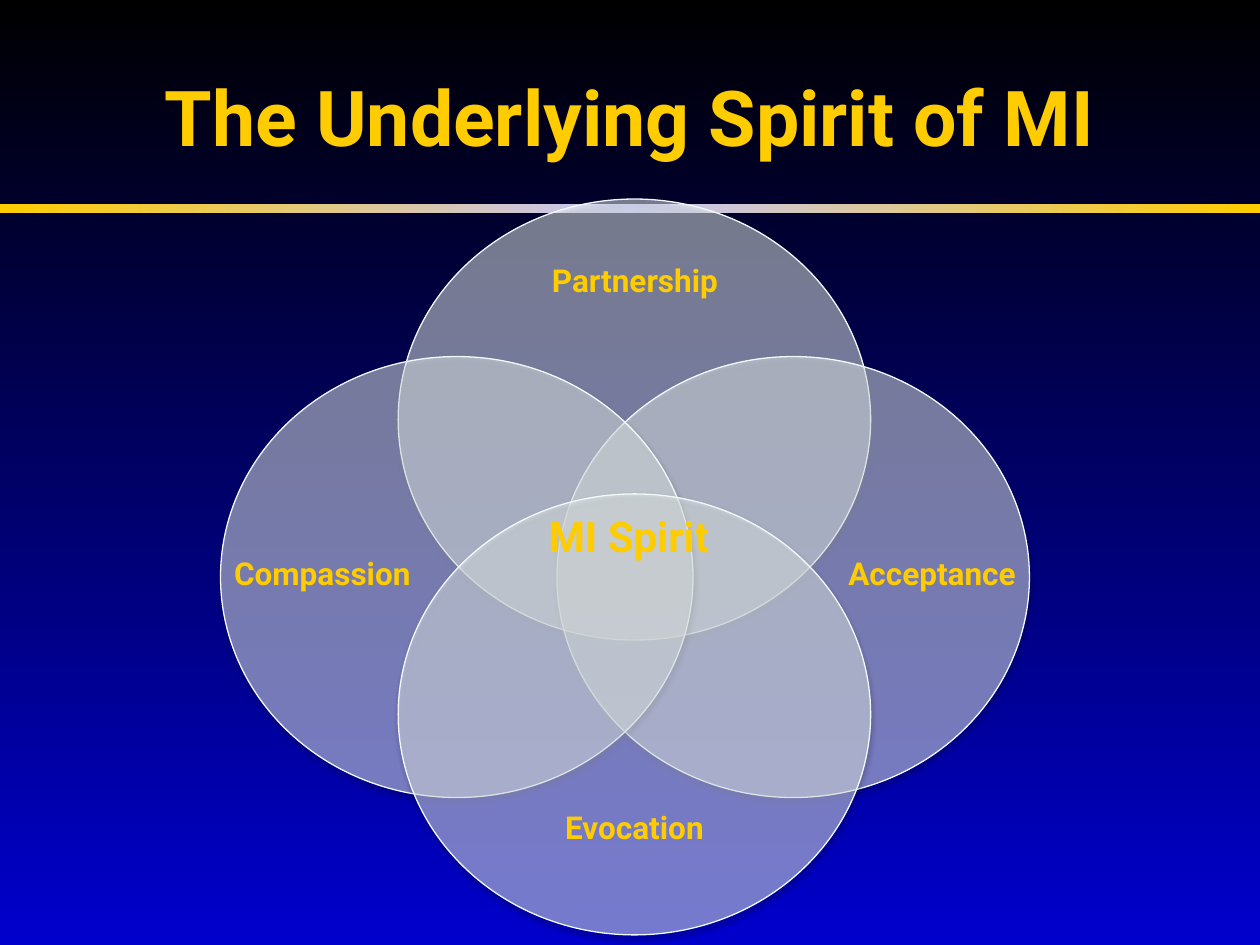
from copy import deepcopy

from lxml.etree import SubElement
from pptx import Presentation
from pptx.dml.color import RGBColor
from pptx.enum.shapes import MSO_SHAPE as Shape
from pptx.enum.text import MSO_ANCHOR as Anchor, MSO_AUTO_SIZE as AutoSize, PP_ALIGN as Align
from pptx.oxml.ns import qn
from pptx.util import Inches, Pt

COLORS = {
    "night": "000000",
    "blue": "0000CC",
    "gold": "FFCC00",
    "lilac": "C5C5FF",
    "mist": "F1F9F9",
    "shadow": "000000",
}
FONT = "Roboto"
CIRCLE_WIDTH, CIRCLE_HEIGHT = 3.75, 3.5
LABEL_HEIGHT = 0.34

CIRCLES = [
    ("Partnership", (3.16, 1.58), (3.79, 2.08, 2.5), Align.CENTER),
    ("Acceptance", (4.42, 2.83), (6.12, 4.41, 2.04), Align.RIGHT),
    ("Compassion", (1.75, 2.83), (1.76, 4.41, 2.16), Align.LEFT),
    ("Evocation", (3.16, 3.92), (3.56, 6.42, 2.95), Align.CENTER),
]


def rgb(name):
    return RGBColor.from_string(COLORS[name])


def inches(*lengths):
    return [Inches(length) for length in lengths]


def set_gradient(fill, element, names, angle):
    fill.gradient()
    fill.gradient_angle = angle
    stop_list = next(element.iter(qn("a:gsLst")))
    for _ in names[2:]:
        stop_list.append(deepcopy(stop_list[0]))
    for index, (stop, name) in enumerate(zip(fill.gradient_stops, names)):
        stop.position = index / (len(names) - 1)
        stop.color.rgb = rgb(name)


def style_paragraph(para, size, align):
    para.alignment = align
    para.font.name = FONT
    para.font.size = Pt(size)
    para.font.bold = True
    para.font.color.rgb = rgb("gold")


def add_label(shapes, box, text, size, align):
    label = shapes.add_textbox(*inches(*box))
    frame = label.text_frame
    frame.word_wrap = True
    frame.auto_size = AutoSize.SHAPE_TO_FIT_TEXT
    para = frame.paragraphs[0]
    para.text = text
    para.line_spacing = 0.8
    style_paragraph(para, size, align)
    return label


def add_shadow(shape):
    shape.shadow.inherit = False
    effects = shape._element.spPr.find(qn("a:effectLst"))
    shadow = SubElement(effects, qn("a:outerShdw"), blurRad=str(Pt(3.1)),
                        dist=str(Pt(1.8)), dir="5400000", rotWithShape="0")
    color = SubElement(shadow, qn("a:srgbClr"), val=COLORS["shadow"])
    SubElement(color, qn("a:alpha"), val="35000")


def add_circle(shapes, box):
    circle = shapes.add_shape(Shape.OVAL, *inches(*box))
    circle.fill.solid()
    circle.fill.fore_color.rgb = rgb("mist")
    color = circle._element.spPr.find(qn("a:solidFill"))[0]
    SubElement(color, qn("a:alpha"), val="49000")
    circle.line.color.rgb = rgb("mist")
    circle.line.width = Pt(0.75)
    add_shadow(circle)


def add_divider(page, box):
    bar = page.shapes.add_shape(Shape.RECTANGLE, *inches(*box))
    bar.shadow.inherit = False
    bar.line.fill.background()
    set_gradient(bar.fill, bar._element.spPr, ["gold", "lilac", "gold"], 0)


def place_title(page, box, text):
    title = page.shapes.title
    title.left, title.top, title.width, title.height = inches(*box)
    title.text_frame.vertical_anchor = Anchor.MIDDLE
    para = title.text_frame.paragraphs[0]
    para.text = text
    style_paragraph(para, 44, Align.CENTER)


def add_venn(page, center_box):
    for text, (left, top), label_box, align in CIRCLES:
        group = page.shapes.add_group_shape()
        add_circle(group.shapes, (left, top, CIRCLE_WIDTH, CIRCLE_HEIGHT))
        add_label(group.shapes, (*label_box, LABEL_HEIGHT), text, 18, align)
    center = add_label(page.shapes, center_box, "MI Spirit", 24, Align.CENTER)
    center.text_frame.margin_left = center.text_frame.margin_right = 0


def main():
    deck = Presentation()
    deck.slide_width, deck.slide_height = inches(10, 7.5)
    page = deck.slides.add_slide(deck.slide_layouts[5])
    set_gradient(page.background.fill, page._element, ["night", "blue"], 270)
    add_divider(page, (0, 1.62, 10, 0.07))
    place_title(page, (0, 0.25, 10, 1.33), "The Underlying Spirit of MI")
    add_venn(page, (4.25, 4.08, 1.48, 0.75))
    deck.save("out.pptx")


if __name__ == "__main__":
    main()
